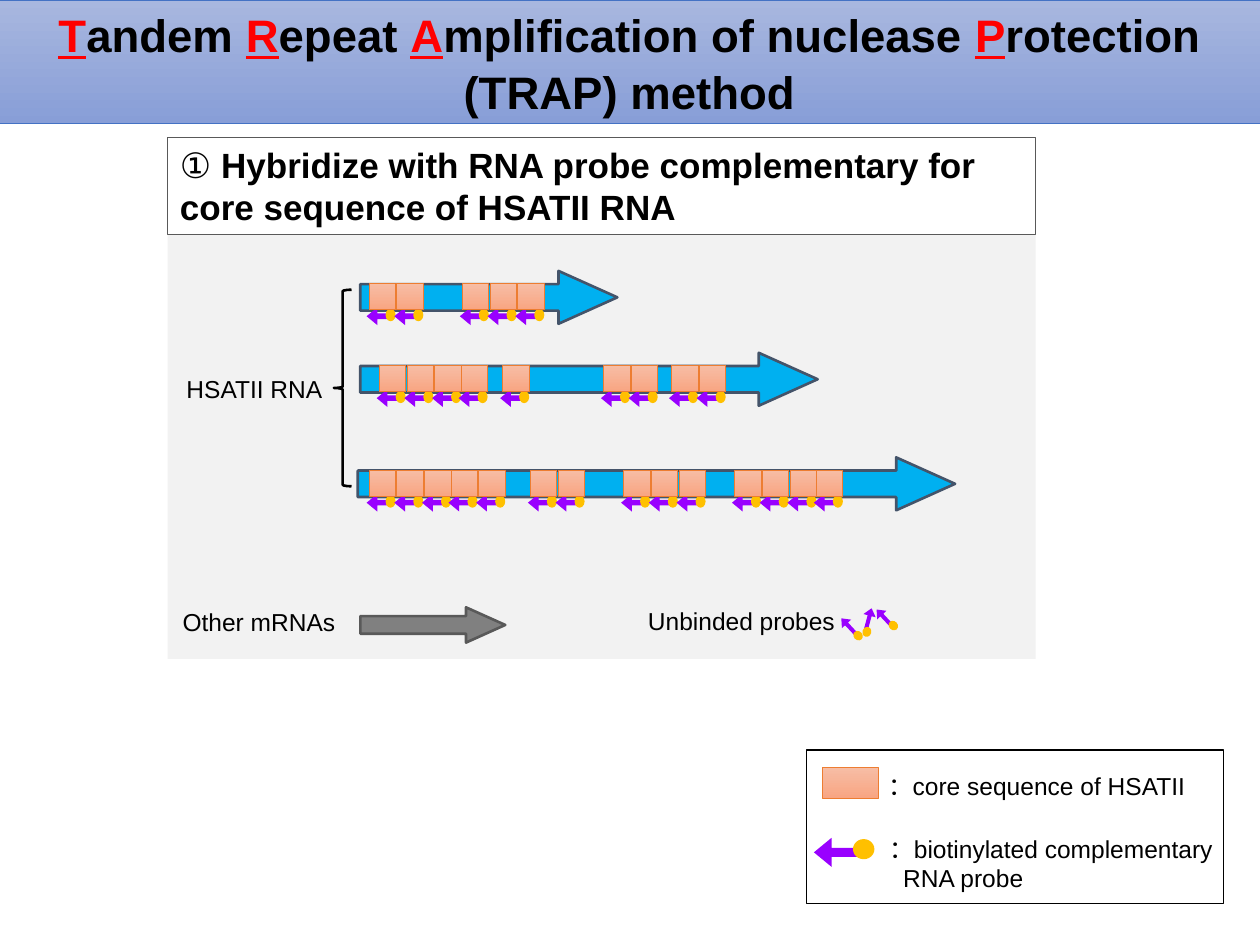
from dataclasses import dataclass
from typing import NamedTuple, Optional

from pptx import Presentation
from pptx.dml.color import RGBColor
from pptx.enum.shapes import MSO_SHAPE
from pptx.enum.text import MSO_ANCHOR, MSO_AUTO_SIZE, PP_ALIGN
from pptx.util import Pt

PX = 9144  # EMU per px, 100 px to the inch
CORE_SIZE = 21
CORE_PITCH = 21.75


@dataclass(frozen=True)
class Theme:
    font: str = "Arial"
    title_size: int = 26
    heading_size: int = 20
    label_size: int = 14
    text: str = "000000"
    initial: str = "FF0000"
    paper: str = "FFFFFF"
    panel: str = "F2F2F2"
    title_fill: tuple = ("A8B7DF", "889ED7")
    title_line: str = "4472C4"
    core_fill: tuple = ("F7BDA5", "F8A582")
    core_line: str = "ED7D31"
    strand: str = "00B0F0"
    strand_line: str = "44546A"
    other: str = "808080"
    grey_line: str = "595959"
    probe: str = "9900FF"
    biotin: str = "FFC000"


THEME = Theme()


class Box(NamedTuple):
    left: int
    top: int
    width: int
    height: int

    def emu(self) -> list:
        return [value * PX for value in self]


class Line(NamedTuple):
    color: str
    points: float


class Cluster(NamedTuple):
    left: int
    count: int


class Strand(NamedTuple):
    box: Box
    clusters: tuple


class Probe(NamedTuple):
    arrow: Box
    biotin: Box
    rotation: int = 0


STRANDS = (
    Strand(Box(284, 363, 474, 42),
           (Cluster(293, 5), Cluster(421, 2), Cluster(495, 3), Cluster(583, 4))),
    Strand(Box(286, 215, 204, 42), (Cluster(293, 2), Cluster(367, 3))),
    Strand(Box(286, 280, 363, 42),
           (Cluster(301, 4), Cluster(399, 1), Cluster(479, 2), Cluster(533, 2))),
)
UNBOUND_PROBES = (
    Probe(Box(665, 492, 17, 10), Box(677, 501, 8, 7), 47),
    Probe(Box(681, 486, 17, 10), Box(684, 498, 8, 7), 105),
    Probe(Box(693, 485, 17, 10), Box(705, 493, 8, 7), 47),
)
LEGEND_PROBE = Probe(Box(646, 665, 36, 23), Box(677, 666, 17, 16))


def rgb(color: str) -> RGBColor:
    return RGBColor.from_string(color)


def paint(shape, fill=None, line: Optional[Line] = None) -> None:
    """Fill with one colour, a vertical gradient pair, or nothing."""
    if fill is None:
        shape.fill.background()
    elif isinstance(fill, tuple):
        shape.fill.gradient()
        shape.fill.gradient_angle = 270
        for stop, color in zip(shape.fill.gradient_stops, fill):
            stop.color.rgb = rgb(color)
    else:
        shape.fill.solid()
        shape.fill.fore_color.rgb = rgb(fill)
    if line is None:
        shape.line.fill.background()
    else:
        shape.line.color.rgb = rgb(line.color)
        shape.line.width = Pt(line.points)


def draw_shape(slide, preset, box: Box, fill=None, line: Optional[Line] = None,
               adjustments: tuple = (), rotation: int = 0):
    shape = slide.shapes.add_shape(preset, *box.emu())
    shape.shadow.inherit = False
    for index, value in enumerate(adjustments):
        shape.adjustments[index] = value
    shape.rotation = rotation
    paint(shape, fill, line)
    return shape


def style_paragraph(paragraph, size: int, alignment, bold: bool = False) -> None:
    paragraph.alignment = alignment
    font = paragraph.font
    font.name, font.size, font.bold = THEME.font, Pt(size), bold
    font.color.rgb = rgb(THEME.text)


def draw_label(slide, box: Box, lines: tuple, alignment=PP_ALIGN.CENTER):
    frame = slide.shapes.add_textbox(*box.emu()).text_frame
    frame.word_wrap = True
    frame.text = "\n".join(lines)
    for paragraph in frame.paragraphs:
        style_paragraph(paragraph, THEME.label_size, alignment)
    return frame


def draw_core(slide, box: Box) -> None:
    draw_shape(slide, MSO_SHAPE.RECTANGLE, box, THEME.core_fill, Line(THEME.core_line, 0.5))


def draw_probe(slide, probe: Probe) -> None:
    draw_shape(slide, MSO_SHAPE.LEFT_ARROW, probe.arrow, THEME.probe,
               adjustments=(0.315, 0.608), rotation=probe.rotation)
    draw_shape(slide, MSO_SHAPE.OVAL, probe.biotin, THEME.biotin, rotation=probe.rotation)


def draw_rna(slide, box: Box, fill: str, line_color: str) -> None:
    draw_shape(slide, MSO_SHAPE.RIGHT_ARROW, box, fill, Line(line_color, 1.5), (0.5, 1.112))


def draw_strand(slide, strand: Strand) -> None:
    """Draw an RNA with its core sequences and the probe bound below each one."""
    draw_rna(slide, strand.box, THEME.strand, THEME.strand_line)
    top = strand.box.top + 10
    lefts = [cluster.left + round(index * CORE_PITCH)
             for cluster in strand.clusters for index in range(cluster.count)]
    for left in lefts:
        draw_probe(slide, Probe(Box(left - 2, top + 19, 17, 14), Box(left + 13, top + 20, 8, 10)))
    for left in lefts:
        draw_core(slide, Box(left, top, CORE_SIZE, CORE_SIZE))


def draw_title(slide) -> None:
    title = slide.shapes.title
    title.left, title.top, title.width, title.height = Box(-1, 0, 1001, 98).emu()
    paint(title, THEME.title_fill, Line(THEME.title_line, 0.5))
    frame = title.text_frame
    frame.word_wrap, frame.auto_size = True, MSO_AUTO_SIZE.NONE
    frame.vertical_anchor = MSO_ANCHOR.MIDDLE
    paragraph = frame.paragraphs[0]
    style_paragraph(paragraph, THEME.title_size, PP_ALIGN.CENTER, bold=True)
    paragraph.line_spacing = 1.05
    for word in ("Tandem ", "Repeat ", "Amplification of nuclease ", "Protection (TRAP) method"):
        initial = paragraph.add_run()
        initial.text = word[0]
        initial.font.underline = True
        initial.font.color.rgb = rgb(THEME.initial)
        paragraph.add_run().text = word[1:]


def draw_heading(slide) -> None:
    heading = draw_shape(slide, MSO_SHAPE.RECTANGLE, Box(133, 109, 689, 77),
                         THEME.paper, Line(THEME.grey_line, 0.75))
    heading.text_frame.word_wrap = True
    paragraph = heading.text_frame.paragraphs[0]
    style_paragraph(paragraph, THEME.heading_size, PP_ALIGN.LEFT)
    paragraph.add_run().text = "① "
    sentence = paragraph.add_run()
    sentence.text = "Hybridize with RNA probe complementary for core sequence of HSATII RNA"
    sentence.font.bold = True


def draw_legend(slide) -> None:
    draw_label(slide, Box(695, 607, 311, 34), ("：core sequence of HSATII",), PP_ALIGN.LEFT)
    frame = draw_label(slide, Box(696, 657, 298, 57),
                       ("：biotinylated complementary", "RNA probe"), PP_ALIGN.LEFT)
    frame.paragraphs[1]._p.get_or_add_pPr().set("marL", str(11 * PX))
    draw_probe(slide, LEGEND_PROBE)
    draw_core(slide, Box(653, 609, 44, 25))
    draw_shape(slide, MSO_SHAPE.RECTANGLE, Box(640, 595, 331, 122), line=Line(THEME.text, 1))


def main() -> None:
    presentation = Presentation()
    presentation.slide_width, presentation.slide_height = 1000 * PX, 750 * PX
    slide = presentation.slides.add_slide(presentation.slide_layouts[5])
    draw_title(slide)
    draw_shape(slide, MSO_SHAPE.RECTANGLE, Box(133, 186, 689, 337), THEME.panel)
    draw_heading(slide)
    draw_label(slide, Box(133, 292, 138, 34), ("HSATII RNA",))
    draw_label(slide, Box(133, 477, 145, 34), ("Other mRNAs",))
    draw_label(slide, Box(501, 476, 175, 34), ("Unbinded probes",))
    draw_rna(slide, Box(286, 482, 115, 28), THEME.other, THEME.grey_line)
    for probe in UNBOUND_PROBES:
        draw_probe(slide, probe)
    for strand in STRANDS:
        draw_strand(slide, strand)
    draw_shape(slide, MSO_SHAPE.LEFT_BRACE, Box(265, 230, 14, 156), line=Line(THEME.text, 1.5))
    draw_legend(slide)
    presentation.save("out.pptx")


if __name__ == "__main__":
    main()
